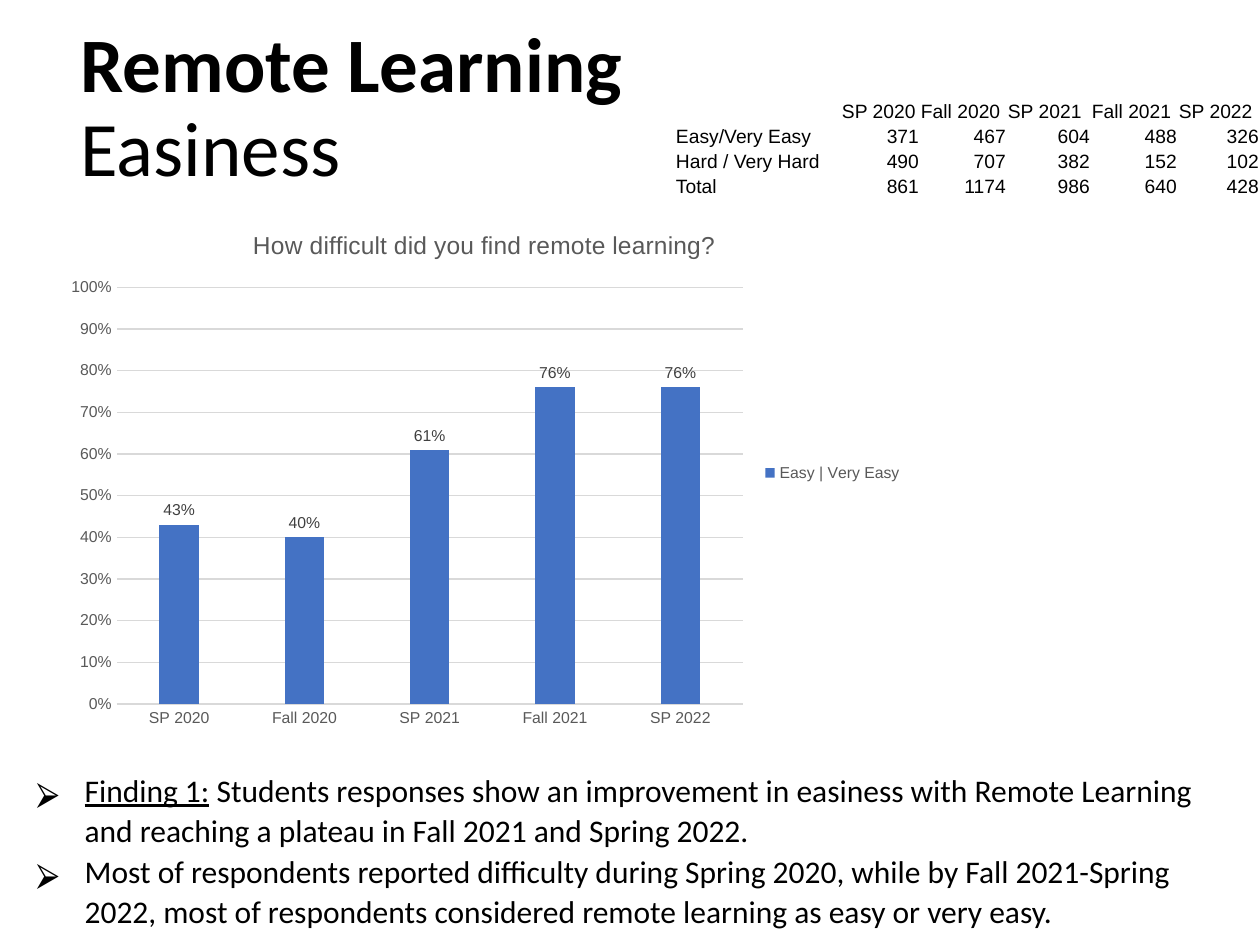
from lxml.etree import SubElement
from pptx import Presentation
from pptx.chart.data import CategoryChartData
from pptx.dml.color import RGBColor
from pptx.enum.chart import (XL_CHART_TYPE as ChartType, XL_LABEL_POSITION as LabelPos,
                             XL_LEGEND_POSITION as LegendPos, XL_TICK_MARK as Tick)
from pptx.enum.text import MSO_ANCHOR as Anchor, MSO_AUTO_SIZE as AutoSize, PP_ALIGN as Align
from pptx.oxml.ns import qn
from pptx.util import Pt

PX = 914400 / 126
TERMS = ["SP 2020", "Fall 2020", "SP 2021", "Fall 2021", "SP 2022"]
EASY_SHARES = [0.43, 0.40, 0.61, 0.76, 0.76]
COUNTS = [
    ["", *TERMS],
    ["Easy/Very Easy", 371, 467, 604, 488, 326],
    ["Hard / Very Hard", 490, 707, 382, 152, 102],
    ["Total", 861, 1174, 986, 640, 428],
]
COLUMN_WIDTHS = [166, 79, 87, 84, 87, 82]
FINDINGS = [
    ["Finding 1:", " Students responses show an improvement in easiness with Remote Learning "
                   "and reaching a plateau in Fall 2021 and Spring 2022."],
    ["Most of respondents reported difficulty during Spring 2020, while by Fall 2021-Spring "
     "2022, most of respondents considered remote learning as easy or very easy."],
]


def px(length):
    return round(length * PX)


def color(value):
    return RGBColor.from_string(value)


def style(font, size, name="Arial", value="000000", bold=False):
    font.size, font.name, font.bold = Pt(size), name, bold
    font.color.rgb = color(value)


def place(shape, box):
    shape.left, shape.top, shape.width, shape.height = map(px, box)


def add_title(page, box):
    title = page.shapes.title
    place(title, box)
    frame = title.text_frame
    frame.auto_size, frame.vertical_anchor = AutoSize.NONE, Anchor.MIDDLE
    frame.text = "Remote Learning\vEasiness"
    para = frame.paragraphs[0]
    para.alignment, para.line_spacing = Align.LEFT, 0.9
    for span, bold in zip(para.runs, [True, False]):
        style(span.font, 44, "Calibri", bold=bold)


def add_findings(page, box):
    body = page.placeholders[1]
    place(body, box)
    frame = body.text_frame
    frame.auto_size, frame.vertical_anchor = AutoSize.NONE, Anchor.TOP
    for index, parts in enumerate(FINDINGS):
        para = frame.add_paragraph() if index else frame.paragraphs[0]
        para.line_spacing, para.space_before = 1.07, Pt(0)
        for part in parts:
            span = para.add_run()
            span.text = part
            style(span.font, 18, "Calibri")
        # Arrow bullet with a hanging indent
        props = para._p.get_or_add_pPr()
        props.set("marL", str(px(48)))
        props.set("indent", str(px(-48)))
        bullet_color = SubElement(props, qn("a:buClr"))
        SubElement(bullet_color, qn("a:srgbClr"), val="000000")
        SubElement(props, qn("a:buFont"), typeface="Noto Sans Symbols")
        SubElement(props, qn("a:buChar"), char="⮚")
    frame.paragraphs[0].runs[0].font.underline = True


def add_chart(page, box):
    data = CategoryChartData(number_format="0%")
    data.categories = TERMS
    data.add_series("Easy | Very Easy", EASY_SHARES)
    chart = page.shapes.add_chart(ChartType.COLUMN_CLUSTERED, *map(px, box), data).chart
    style(chart.font, 10)

    # Title and legend
    heading = chart.chart_title.text_frame
    heading.text = "How difficult did you find remote learning?"
    style(heading.paragraphs[0].runs[0].font, 14, value="595959")
    chart.has_legend = True
    chart.legend.position, chart.legend.include_in_layout = LegendPos.RIGHT, False
    style(chart.legend.font, 9, value="595959")

    # Axes
    terms, shares = chart.category_axis, chart.value_axis
    for axis in (terms, shares):
        axis.major_tick_mark = axis.minor_tick_mark = Tick.NONE
        style(axis.tick_labels.font, 9, value="595959")
    shares.minimum_scale, shares.maximum_scale, shares.major_unit = 0, 1, 0.1
    shares.tick_labels.number_format = "0%"
    shares.tick_labels.number_format_is_linked = False
    shares.format.line.fill.background()
    for line in (terms.format.line, shares.major_gridlines.format.line):
        line.color.rgb, line.width = color("D9D9D9"), Pt(0.75)

    # Columns and their labels
    plot = chart.plots[0]
    plot.gap_width, plot.overlap, plot.vary_by_categories = 219, -27, False
    fill = plot.series[0].format.fill
    fill.solid()
    fill.fore_color.rgb = color("4472C4")
    labels = plot.series[0].data_labels
    labels.show_value, labels.position = True, LabelPos.OUTSIDE_END
    labels.number_format, labels.number_format_is_linked = "0%", False
    style(labels.font, 9, value="404040")


def add_counts(page, box):
    table = page.shapes.add_table(len(COUNTS), len(COLUMN_WIDTHS), *map(px, box)).table
    table.first_row = table.horz_banding = False
    for column, width in zip(table.columns, COLUMN_WIDTHS):
        column.width = px(width)
    for r, values in enumerate(COUNTS):
        table.rows[r].height = px(box[3] / len(COUNTS))
        for c, value in enumerate(values):
            cell = table.cell(r, c)
            cell.fill.background()
            cell.vertical_anchor = Anchor.BOTTOM
            cell.margin_left = cell.margin_right = cell.margin_top = px(1)
            cell.margin_bottom = 0
            cell.text = str(value)
            para = cell.text_frame.paragraphs[0]
            para.alignment = Align.RIGHT if r and c else Align.LEFT
            for span in para.runs:
                style(span.font, 11)
            if not value:  # keeps the empty corner as low as its row
                SubElement(para._p, qn("a:endParaRPr"), sz="1100")


def main():
    deck = Presentation()
    deck.slide_width, deck.slide_height = px(1260), px(945)
    page = deck.slides.add_slide(deck.slide_layouts[1])
    add_findings(page, (24, 762, 1212, 163))
    add_title(page, (68, 18, 1086, 183))
    add_chart(page, (54, 208, 861, 530))
    add_counts(page, (675, 97, 585, 101))
    deck.save("out.pptx")


if __name__ == "__main__":
    main()
